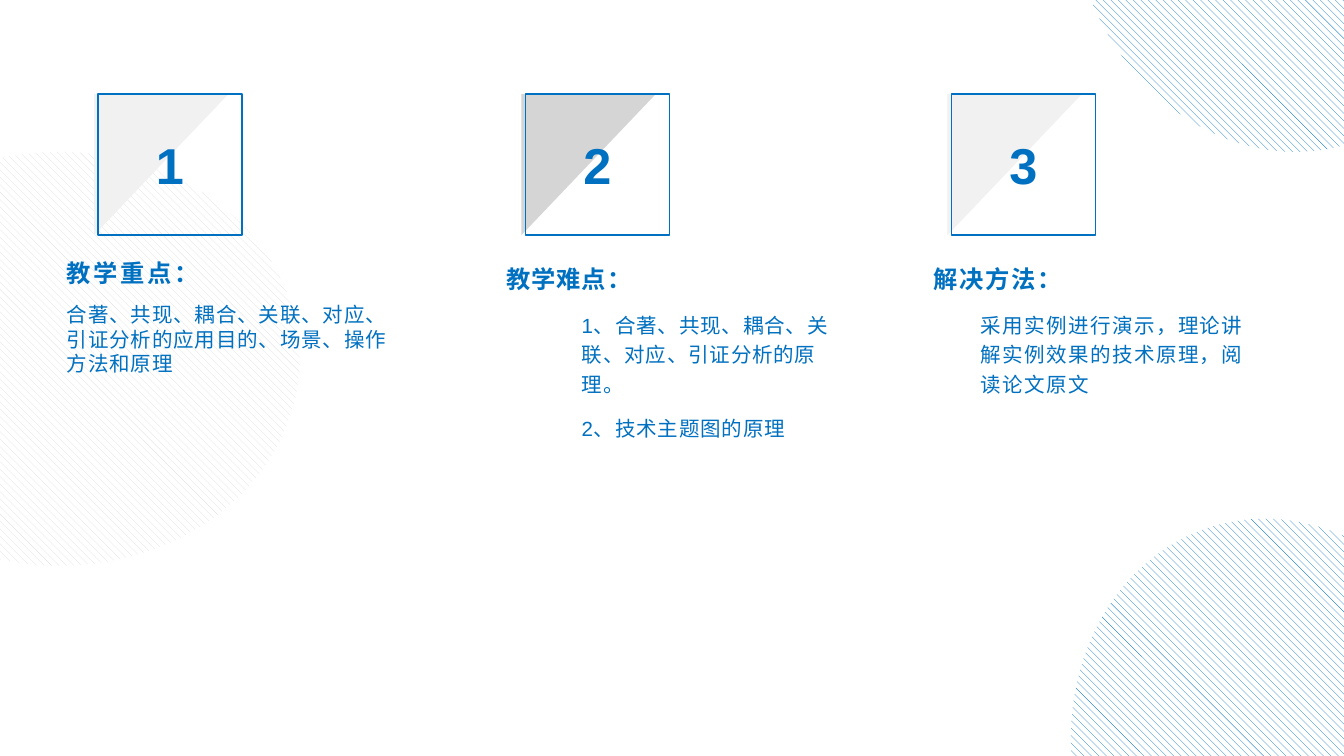
from dataclasses import dataclass

from pptx import Presentation
from pptx.dml.color import RGBColor
from pptx.enum.dml import MSO_PATTERN
from pptx.enum.shapes import MSO_SHAPE
from pptx.enum.text import MSO_ANCHOR, PP_ALIGN
from pptx.util import Inches, Pt


@dataclass(frozen=True)
class Theme:
    font: str = "Arial"
    blue: str = "0070C0"
    white: str = "FFFFFF"
    pale_gray: str = "F1F1F1"
    mid_gray: str = "D5D5D5"
    stripe_gray: str = "DDDDDD"
    number_size: int = 27
    heading_size: int = 13
    body_size: int = 11


theme = Theme()


def add_plain_shape(kind, left, top, width, height):
    """Add a preset shape with no shadow, fill or line."""
    shape = slide.shapes.add_shape(
        kind, Inches(left), Inches(top), Inches(width), Inches(height))
    shape.shadow.inherit = False
    shape.fill.background()
    shape.line.fill.background()
    return shape


def write(paragraph, text, size, bold=False, spacing=0, level=0, indent=0,
          line_spacing=None, space_after=0, align=PP_ALIGN.LEFT):
    """Fill a paragraph; spacing is between characters, in points."""
    paragraph.alignment = align
    paragraph.level = level
    paragraph.space_after = Pt(space_after)
    paragraph.line_spacing = line_spacing
    properties = paragraph._p.get_or_add_pPr()
    properties.set("marL", str(Inches(indent)))
    properties.set("indent", "0")
    run = paragraph.add_run()
    run.text = text
    run.font.name = theme.font
    run.font.size = Pt(size)
    run.font.bold = bold
    run.font.color.rgb = RGBColor.from_string(theme.blue)
    if spacing:
        run._r.get_or_add_rPr().set("spc", str(round(spacing * 100)))


presentation = Presentation()
presentation.slide_width = Inches(10)
presentation.slide_height = Inches(10) * 9 // 16
slide = presentation.slides.add_slide(presentation.slide_layouts[6])

# Striped ellipses: left, top, rotation, stripe colour
striped_ellipses = [
    (7.74, -2.18, 75, theme.blue),
    (7.74, 4.09, 75, theme.blue),
    (-1.34, 1.13, 0, theme.stripe_gray),
]
for left, top, rotation, color in striped_ellipses:
    ellipse = add_plain_shape(MSO_SHAPE.OVAL, left, top, 3.57, 3.08)
    ellipse.rotation = rotation
    ellipse.fill.patterned()
    ellipse.fill.pattern = MSO_PATTERN.WIDE_DOWNWARD_DIAGONAL
    ellipse.fill.fore_color.rgb = RGBColor.from_string(color)
    ellipse.fill.back_color.rgb = RGBColor.from_string(theme.white)

# Columns: text left, badge left, badge colour, heading, its spacing,
# body paragraphs, their format, line spacing
columns = [
    (0.4, 0.7, theme.pale_gray, "教学重点：", 1.4,
     ["合著、共现、耦合、关联、对应、引证分析的应用目的、场景、操作方法和原理"],
     dict(spacing=0.4), None),
    (3.67, 3.88, theme.mid_gray, "教学难点：", 0.5,
     ["1、合著、共现、耦合、关联、对应、引证分析的原理。", "2、技术主题图的原理"],
     dict(spacing=0.4, level=2, indent=0.56), 1.2),
    (6.85, 7.05, theme.pale_gray, "解决方法：", 0.9,
     ["采用实例进行演示，理论讲解实例效果的技术原理，阅读论文原文"],
     dict(spacing=0.7, level=1, indent=0.35), 1.2),
]
for number, column in enumerate(columns, start=1):
    (text_left, badge_left, badge_color, heading, heading_spacing,
     body, body_format, line_spacing) = column

    text_box = slide.shapes.add_textbox(
        Inches(text_left), Inches(1.87), Inches(2.65), Inches(3.05))
    frame = text_box.text_frame
    frame.word_wrap = True
    write(frame.paragraphs[0], heading, theme.heading_size, bold=True,
          spacing=heading_spacing, line_spacing=line_spacing, space_after=8)
    for text in body:
        write(frame.add_paragraph(), text, theme.body_size,
              line_spacing=line_spacing, space_after=8, **body_format)

    triangle = add_plain_shape(
        MSO_SHAPE.RIGHT_TRIANGLE, badge_left, 0.7, 1, 1.05)
    triangle.fill.solid()
    triangle.fill.fore_color.rgb = RGBColor.from_string(badge_color)
    triangle.element.spPr.xfrm.set("flipV", "1")

    badge = add_plain_shape(
        MSO_SHAPE.RECTANGLE, badge_left + 0.03, 0.7, 1.07, 1.05)
    badge.line.color.rgb = RGBColor.from_string(theme.blue)
    badge.line.width = Pt(0.75)
    badge.text_frame.vertical_anchor = MSO_ANCHOR.MIDDLE
    write(badge.text_frame.paragraphs[0], str(number), theme.number_size,
          bold=True, align=PP_ALIGN.CENTER)

presentation.save("out.pptx")
